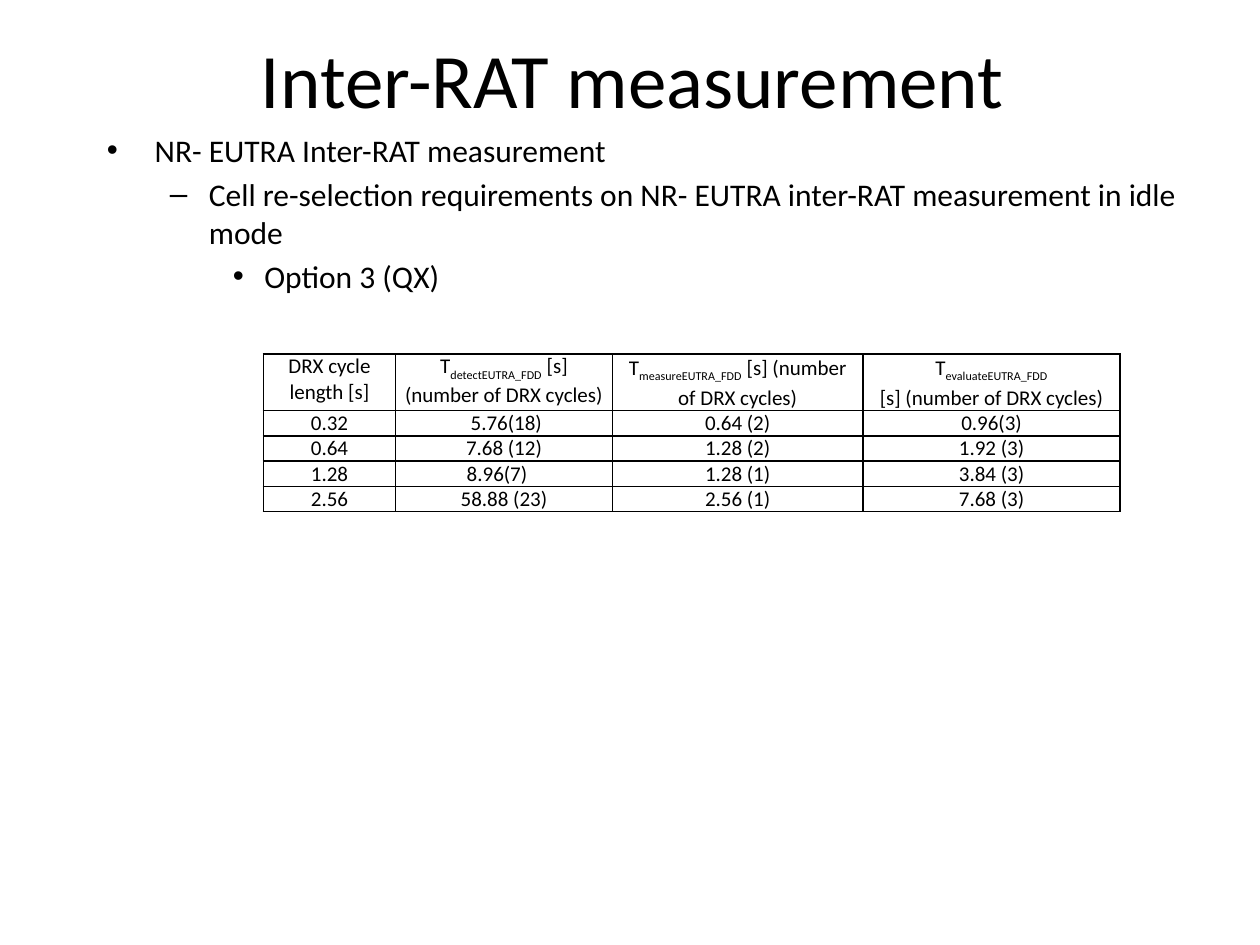
from dataclasses import dataclass
from lxml.etree import SubElement
from pptx import Presentation
from pptx.dml.color import RGBColor
from pptx.enum.text import MSO_ANCHOR as Anchor, PP_ALIGN as Align
from pptx.oxml.ns import qn
from pptx.util import Inches, Pt


@dataclass(frozen=True)
class Theme:
    font: str = "Calibri"
    ink: str = "000000"
    title: float = 44
    body: float = 18
    cell: float = 12
    border: float = 1


theme = Theme()


def style(r, size):
    r.font.name = theme.font
    r.font.size = Pt(size)
    r.font.color.rgb = RGBColor.from_string(theme.ink)


def add_border(cell):
    tcPr = cell._tc.get_or_add_tcPr()
    for side in ("a:lnL", "a:lnR", "a:lnT", "a:lnB"):
        ln = SubElement(tcPr, qn(side), w=str(Pt(theme.border)))
        fill = SubElement(ln, qn("a:solidFill"))
        SubElement(fill, qn("a:srgbClr"), val=theme.ink)


prs = Presentation()
prs.slide_width, prs.slide_height = Inches(10), Inches(7.5)
s = prs.slides.add_slide(prs.slide_layouts[6])

title = s.shapes.add_textbox(Inches(0.59), Inches(-0.01), Inches(9), Inches(1.25))
tf = title.text_frame
tf.word_wrap = True
tf.vertical_anchor = Anchor.MIDDLE
p = tf.paragraphs[0]
p.text = "Inter-RAT measurement "
p.alignment = Align.CENTER
style(p.runs[0], theme.title)

bullets = [
    ("NR- EUTRA Inter-RAT measurement", "•", 0.38, 0.38),
    ("Cell re-selection requirements on NR- EUTRA inter-RAT measurement in idle mode", "–", 0.81, 0.31),
    ("Option 3 (QX)", "•", 1.25, 0.25),
]
body = s.shapes.add_textbox(Inches(0.75), Inches(0.99), Inches(9), Inches(2.76))
tf = body.text_frame
tf.word_wrap = True
for level, (text, mark, left, hang) in enumerate(bullets):
    p = tf.add_paragraph() if level else tf.paragraphs[0]
    p.text = text
    p.level = level
    p.space_before = Pt(0.2 * theme.body)
    style(p.runs[0], theme.body)
    pPr = p._p.get_or_add_pPr()
    pPr.set("marL", str(Inches(left)))
    pPr.set("indent", str(-Inches(hang)))
    SubElement(pPr, qn("a:buFont"), typeface="Arial")
    SubElement(pPr, qn("a:buChar"), char=mark)

widths = [1.05, 1.72, 1.99, 2.04]
heights = [0.45] + [0.2] * 4
headers = [
    ("", "DRX cycle length [s]", 1),
    ("detectEUTRA_FDD", " [s] (number of DRX cycles)", 1),
    ("measureEUTRA_FDD", " [s] (number of DRX cycles)", 1.05),
    ("evaluateEUTRA_FDD", "\n[s] (number of DRX cycles)", 1.05),
]
values = [
    ("0.32", " 5.76(18)", "0.64 (2)", "0.96(3)"),
    ("0.64", "7.68 (12)", "1.28 (2)", "1.92 (3)"),
    ("1.28", "8.96(7)", "1.28 (1)", "3.84 (3)"),
    ("2.56", "58.88 (23)", "2.56 (1)", "7.68 (3)"),
]
frame = s.shapes.add_table(len(heights), len(widths), Inches(2.09), Inches(2.81),
                           Inches(sum(widths)), Inches(sum(heights)))
table = frame.table
table.first_row = table.horz_banding = False
for column, width in zip(table.columns, widths):
    column.width = Inches(width)
for row, height in zip(table.rows, heights):
    row.height = Inches(height)

for cell, (subscript, label, spacing) in zip(table.rows[0].cells, headers):
    tf = cell.text_frame
    tf.text = label
    for p in tf.paragraphs:
        p.line_spacing = spacing
    if subscript:
        p = tf.paragraphs[0]
        p.text = ""
        for text in ("T", subscript, label.split("\n")[0]):
            if text:
                r = p.add_run()
                r.text = text
                if text == subscript:
                    r.font._element.set("baseline", "-25000")

for row, texts in zip(list(table.rows)[1:], values):
    for cell, text in zip(row.cells, texts):
        cell.text_frame.text = text

for cell in table.iter_cells():
    cell.margin_left = cell.margin_right = Inches(0.07)
    cell.margin_top = cell.margin_bottom = 0
    add_border(cell)
    cell.fill.background()
    for p in cell.text_frame.paragraphs:
        p.alignment = Align.CENTER
        for r in p.runs:
            style(r, theme.cell)
table.cell(3, 1).margin_right = Inches(0.18)

prs.save("out.pptx")
